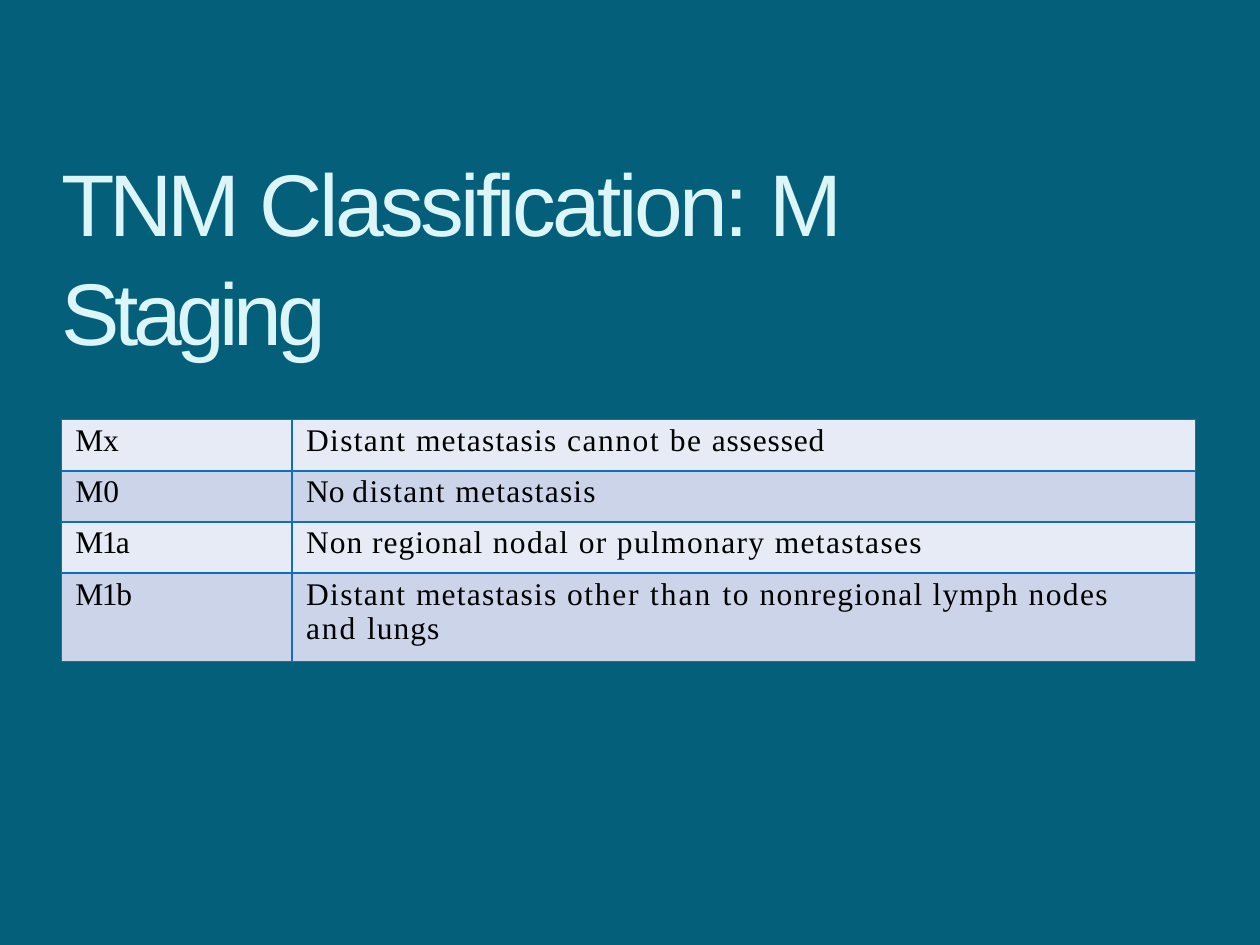
from pptx import Presentation
from pptx import util as u
from pptx.dml import color
from pptx.enum import text
from pptx.oxml import parse_xml
from pptx.oxml import ns

BACKGROUND = color.RGBColor(0x04, 0x60, 0x7A)
TITLE = color.RGBColor(0xDB, 0xF5, 0xF8)
INK = color.RGBColor(0, 0, 0)
BANDS = [color.RGBColor(0xE7, 0xEB, 0xF5), color.RGBColor(0xCC, 0xD4, 0xEA)]
BORDER = color.RGBColor(0x0E, 0x6E, 0xC5)


def add_spans(para, spans, font, size, ink):
    for words, spacing in spans:
        span = para.add_run()
        span.text = words
        span.font.name = font
        span.font.size = u.Pt(size)
        span.font.color.rgb = ink
        span.font._element.set("spc", str(round(spacing * 100)))


def add_borders(cell):
    properties = cell._tc.get_or_add_tcPr()
    for side in ("lnL", "lnR", "lnT", "lnB"):
        properties.append(parse_xml(
            f'<a:{side} {ns.nsdecls("a")} w="{u.Pt(1)}"><a:solidFill>'
            f'<a:srgbClr val="{BORDER}"/></a:solidFill></a:{side}>'))


deck = Presentation()
deck.slide_width = u.Cm(25.4)
deck.slide_height = u.Cm(19.05)
page = deck.slides.add_slide(deck.slide_layouts[5])
page.background.fill.solid()
page.background.fill.fore_color.rgb = BACKGROUND

title = page.shapes.title
title.left, title.top = u.Cm(1.24), u.Cm(2.87)
title.width, title.height = u.Cm(21.29), u.Cm(2.18)
box = title.text_frame
box.word_wrap = True
box.auto_size = text.MSO_AUTO_SIZE.NONE
box.vertical_anchor = text.MSO_ANCHOR.TOP
box.margin_left = box.margin_right = box.margin_bottom = 0
box.margin_top = u.Cm(0.05)
para = box.paragraphs[0]
para.alignment = text.PP_ALIGN.LEFT
para.line_spacing = 1.04
add_spans(para, [("TNM ", -3), ("Classification: ", -2.1), ("M ", 1.1), ("Staging", -3.1)],
          "Arial", 50, TITLE)

stages = [
    ([("Mx", -0.1)],
     [("Distant ", 0.8), ("metastasis ", 0.7), ("cannot ", 0.9), ("be ", 0.8), ("assessed", 0.5)]),
    ([("M0", 0)],
     [("No ", 0), ("distant ", 0.8), ("metastasis", 0.7)]),
    ([("M1a", -0.9)],
     [("Non regional ", 0.6), ("nodal or pulmonary metastases", 0.8)]),
    ([("M1b", -0.8)],
     [("Distant ", 0.8), ("metastasis ", 0.7), ("other ", 1), ("than ", 1.2), ("to ", 0.9),
      ("nonregional lymph ", 0.7), ("nodes ", 0.8), ("and ", 1.1), ("lungs", 0.6)]),
]
widths = [4.65, 18.21]
heights = [1.03, 1.03, 1.03, 1.78]
table = page.shapes.add_table(len(heights), len(widths), u.Cm(1.24), u.Cm(8.46),
                              u.Cm(sum(widths)), u.Cm(sum(heights))).table
table.first_row = False
table.horz_banding = False
for column, width in zip(table.columns, widths):
    column.width = u.Cm(width)

for index, (row, stage) in enumerate(zip(table.rows, stages)):
    row.height = u.Cm(heights[index])
    for cell, spans in zip(row.cells, stage):
        add_borders(cell)
        cell.fill.solid()
        cell.fill.fore_color.rgb = BANDS[index % 2]
        cell.margin_left = u.Cm(0.28)
        cell.margin_right = u.Cm(1.5)
        cell.margin_top = u.Cm(0.08)
        cell.margin_bottom = 0
        add_spans(cell.text_frame.paragraphs[0], spans, "Times New Roman", 18, INK)

deck.save("out.pptx")
